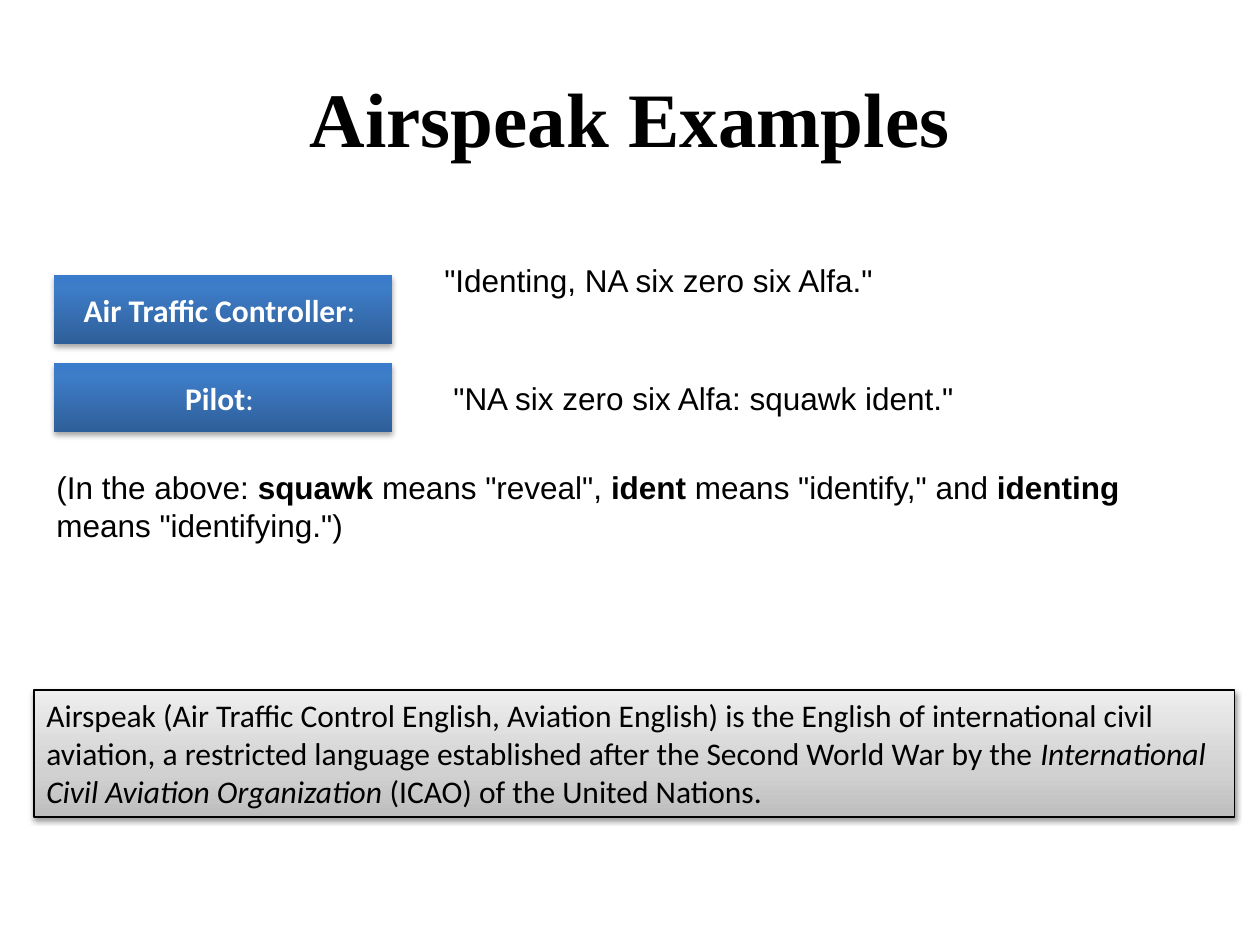
"""Build the Airspeak Examples slide."""
from lxml import etree
from pptx import Presentation
from pptx.dml.color import RGBColor
from pptx.enum.shapes import MSO_SHAPE
from pptx.enum.text import MSO_ANCHOR, PP_ALIGN
from pptx.oxml.ns import nsdecls
from pptx.util import Pt

RECT = MSO_SHAPE.RECTANGLE
TOP, MIDDLE = MSO_ANCHOR.TOP, MSO_ANCHOR.MIDDLE
LEFT, CENTER = PP_ALIGN.LEFT, PP_ALIGN.CENTER
PX = 914400 // 126
NS = nsdecls("a")

TITLE = [("Airspeak Examples", {"bold": True})]
SPEAKERS = ["Air Traffic Controller", "Pilot"]
SPEAKER_BOX = (54, 275, 338, 69)
SPEAKER_STEP = 88
TEXTS = [
    ((441, 373, 529, 50), False, [('"NA six zero six Alfa: squawk ident."', {})]),
    ((432, 255, 630, 89), True, [('"Identing, NA six zero six Alfa."', {})]),
    ((44, 462, 1160, 89), True, [
        ("(In the above: ", {}),
        ("squawk", {"bold": True}),
        (' means "reveal", ', {}),
        ("ident", {"bold": True}),
        (' means "identify," and ', {}),
        ("identing", {"bold": True}),
        (' means "identifying.")', {}),
    ]),
]
DEFINITION = [
    ("Airspeak (Air Traffic Control English, Aviation English) is the English of "
     "international civil aviation, a restricted language established after the "
     "Second World War by the ", {}),
    ("International Civil Aviation Organization ", {"italic": True}),
    ("(ICAO) of the United Nations.", {}),
]
BLUE = {"stops": [(0, "2F5F99"), (80, "3D7CC7"), (100, "3A7CCB")],
        "shadow": (35, 23000), "line": None}
GRAY = {"stops": [(0, "BDBDBD"), (35, "D1D1D1"), (100, "EEEEEE")],
        "shadow": (38, 20000), "line": "000000"}


def color(value):
    return RGBColor.from_string(value)


def scale(box):
    return [v * PX for v in box]


def write(s, runs, font, size=18, ink="000000", align=LEFT, anchor=TOP, wrap=True):
    tf = s.text_frame
    tf.word_wrap = wrap
    tf.vertical_anchor = anchor
    p = tf.paragraphs[0]
    p.alignment = align
    for text, marks in runs:
        r = p.add_run()
        r.text = text
        look = {"name": font, "size": Pt(size), "bold": False, "italic": False, **marks}
        for key, value in look.items():
            setattr(r.font, key, value)
        r.font.color.rgb = color(ink)


def add_panel(slide, box, style):
    s = slide.shapes.add_shape(RECT, *scale(box))
    spPr = s.element.spPr
    stops = "".join(f'<a:gs pos="{pos * 1000}"><a:srgbClr val="{c}"/></a:gs>'
                    for pos, c in style["stops"])
    spPr.append(etree.fromstring(
        f'<a:gradFill {NS} rotWithShape="1"><a:gsLst>{stops}</a:gsLst>'
        '<a:lin ang="16200000" scaled="0"/></a:gradFill>'))
    if style["line"]:
        s.line.color.rgb = color(style["line"])
        s.line.width = Pt(0.75)
    else:
        s.line.fill.background()
    alpha, dist = style["shadow"]
    spPr.append(etree.fromstring(
        f'<a:effectLst {NS}><a:outerShdw blurRad="40000" dist="{dist}" dir="5400000" '
        f'rotWithShape="0"><a:srgbClr val="000000"><a:alpha val="{alpha * 1000}"/>'
        '</a:srgbClr></a:outerShdw></a:effectLst>'))
    return s


def main():
    prs = Presentation()
    prs.slide_width, prs.slide_height = scale((1260, 945))
    slide = prs.slides.add_slide(prs.slide_layouts[5])
    title = slide.shapes.title
    title.left, title.top, title.width, title.height = scale((63, 38, 1134, 157))
    write(title, TITLE, "Times New Roman", 44, align=CENTER, anchor=MIDDLE)

    x, y, w, h = SPEAKER_BOX
    for i, name in enumerate(SPEAKERS):
        s = add_panel(slide, (x, y + i * SPEAKER_STEP, w, h), BLUE)
        write(s, [(name, {"bold": True}), (": ", {})], "Calibri",
              ink="FFFFFF", align=CENTER, anchor=MIDDLE)

    for box, wrap, runs in TEXTS:
        write(slide.shapes.add_textbox(*scale(box)), runs, "Arial", wrap=wrap)

    write(add_panel(slide, (34, 690, 1201, 127), GRAY), DEFINITION, "Calibri")
    prs.save("out.pptx")


if __name__ == "__main__":
    main()
